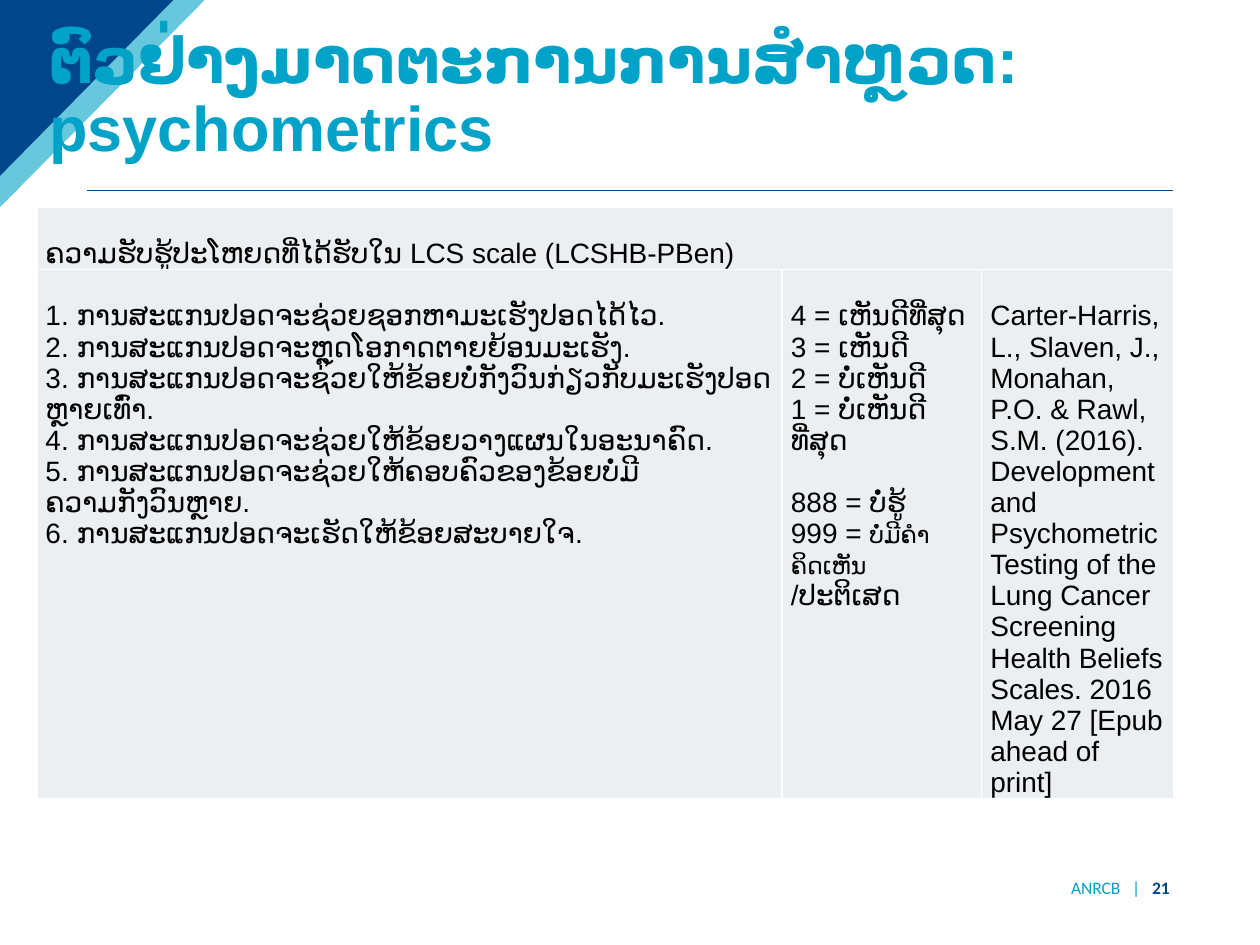
from dataclasses import dataclass

from lxml.etree import SubElement
from pptx import Presentation
from pptx.dml.color import RGBColor
from pptx.enum.shapes import MSO_CONNECTOR
from pptx.enum.text import MSO_ANCHOR, PP_ALIGN
from pptx.oxml.ns import qn
from pptx.util import Pt

CYAN = RGBColor(0x00, 0xA2, 0xC7)
NAVY = RGBColor(0x00, 0x46, 0x8B)
BLACK = RGBColor(0x00, 0x00, 0x00)
WHITE = RGBColor(0xFF, 0xFF, 0xFF)
PALE = RGBColor(0xEB, 0xEF, 0xF1)

BODY = {"name": "Arial", "size": Pt(16), "bold": False}
SMALL = {**BODY, "size": Pt(13.5)}
TITLE = {"name": "Arial", "size": Pt(36), "bold": True}
FOOTER = {"name": "Calibri", "size": Pt(10), "bold": False}
BLANK_LINE = 17.8


@dataclass(frozen=True)
class Span:
    text: str
    font: dict
    color: RGBColor = BLACK
    tracking: float = 0


@dataclass(frozen=True)
class Para:
    spans: tuple[Span, ...]
    format: dict


@dataclass(frozen=True)
class Corner:
    width: float
    height: float
    color: RGBColor
    opacity: int


@dataclass(frozen=True)
class TextBox:
    left: float
    top: float
    width: float
    height: float
    anchor: MSO_ANCHOR
    para: Para


def body(text: str, space: float = 0) -> Para:
    return Para((Span(text, BODY),), {"space_before": Pt(space)})


CORNERS = (Corner(117, 118.5, CYAN, 60), Corner(99, 100.5, NAVY, 100))

GAP = Span(" ", FOOTER, CYAN, 4.5)
BOXES = (
    TextBox(556.5, 499.5, 119, 15, MSO_ANCHOR.MIDDLE, Para(
        (Span("ANRCB", FOOTER, CYAN), GAP, Span("|", FOOTER, CYAN), GAP,
         Span("21", {**FOOTER, "bold": True}, NAVY)),
        {"alignment": PP_ALIGN.RIGHT})),
    TextBox(21, 18, 682.5, 80, MSO_ANCHOR.BOTTOM, Para(
        (Span("ຕົວຢ່າງມາດຕະການການສໍາຫຼວດ: psychometrics", TITLE, CYAN),),
        {"line_spacing": 0.9})),
)

COLUMN_WIDTHS = (426, 114, 109.5)
ROW_HEIGHTS = (35, 302)
HEADING = [body("ຄວາມຮັບຮູ້ປະໂຫຍດທີ່ໄດ້ຮັບໃນ LCS scale (LCSHB-PBen)")]
ITEMS = [body(text) for text in (
    "1. ການສະແກນປອດຈະຊ່ວຍຊອກຫາມະເຮັງປອດໄດ້ໄວ.",
    "2. ການສະແກນປອດຈະຫຼຸດໂອກາດຕາຍຍ້ອນມະເຮັງ.",
    "3. ການສະແກນປອດຈະຊ່ວຍໃຫ້ຂ້ອຍບໍ່ກັງວົນກ່ຽວກັບມະເຮັງປອດຫຼາຍເທົ່າ.",
    "4. ການສະແກນປອດຈະຊ່ວຍໃຫ້ຂ້ອຍວາງແຜນໃນອະນາຄົດ.",
    "5. ການສະແກນປອດຈະຊ່ວຍໃຫ້ຄອບຄົວຂອງຂ້ອຍບໍ່ມີຄວາມກັງວົນຫຼາຍ.",
    "6. ການສະແກນປອດຈະເຮັດໃຫ້ຂ້ອຍສະບາຍໃຈ.",
)]
ANSWERS = [
    body("4 = ເຫັນດີທີ່ສຸດ"),
    body("3 = ເຫັນດີ"),
    body("2 = ບໍ່ເຫັນດີ"),
    body("1 = ບໍ່ເຫັນດີທີ່ສຸດ"),
    body("888 = ບໍ່ຮູ້", BLANK_LINE),
    Para((Span("999 = ", BODY), Span("ບໍ່ມີຄຳຄິດເຫັນ", SMALL),
          Span(" /ປະຕິເສດ", BODY)), {}),
]
CITATION = [body(
    "Carter-Harris, L., Slaven, J., Monahan, P.O. & Rawl, S.M. (2016). "
    "Development and Psychometric Testing of the Lung Cancer Screening "
    "Health Beliefs Scales. 2016 May 27 [Epub ahead of print]")]
CELLS = {(0, 0): HEADING, (1, 0): ITEMS, (1, 1): ANSWERS, (1, 2): CITATION}


def apply(target, values: dict) -> None:
    for name, value in values.items():
        setattr(target, name, value)


def write(frame, paras: list[Para]) -> None:
    for index, para in enumerate(paras):
        paragraph = frame.add_paragraph() if index else frame.paragraphs[0]
        apply(paragraph, para.format)
        for span in para.spans:
            run = paragraph.add_run()
            run.text = span.text
            apply(run.font, span.font)
            run.font.color.rgb = span.color
            properties = run.font._element
            SubElement(properties, qn("a:cs"), typeface=span.font["name"])
            if span.tracking:
                properties.set("spc", str(int(span.tracking * 100)))


def draw_corner(page, corner: Corner) -> None:
    builder = page.shapes.build_freeform(0, 0)
    builder.add_line_segments([(Pt(corner.width), 0), (0, Pt(corner.height))])
    shape = builder.convert_to_shape()
    shape.shadow.inherit = False
    shape.line.fill.background()
    shape.fill.solid()
    shape.fill.fore_color.rgb = corner.color
    if corner.opacity < 100:
        color = shape.fill._xPr.find(".//" + qn("a:srgbClr"))
        SubElement(color, qn("a:alpha"), val=str(corner.opacity * 1000))


def draw_rule(page) -> None:
    rule = page.shapes.add_connector(
        MSO_CONNECTOR.STRAIGHT, Pt(49.7), Pt(108.7), Pt(670.3), Pt(108.7))
    rule.line.color.rgb = NAVY
    rule.line.width = Pt(0.75)
    SubElement(rule._element.spPr, qn("a:effectLst"))


def draw_text(page, item: TextBox) -> None:
    box = page.shapes.add_textbox(
        Pt(item.left), Pt(item.top), Pt(item.width), Pt(item.height))
    apply(box.text_frame, {"word_wrap": True, "vertical_anchor": item.anchor})
    write(box.text_frame, [item.para])


def style_cell(cell) -> None:
    apply(cell, {"margin_left": Pt(5), "margin_right": Pt(5),
                 "margin_top": Pt(BLANK_LINE), "margin_bottom": 0})
    properties = cell._tc.get_or_add_tcPr()
    for side in ("a:lnL", "a:lnR", "a:lnT", "a:lnB"):
        border = SubElement(properties, qn(side), w=str(Pt(1)))
        fill = SubElement(border, qn("a:solidFill"))
        SubElement(fill, qn("a:srgbClr"), val=str(WHITE))
    cell.fill.solid()
    cell.fill.fore_color.rgb = PALE


def draw_table(page) -> None:
    table = page.shapes.add_table(
        len(ROW_HEIGHTS), len(COLUMN_WIDTHS), Pt(21), Pt(118.5),
        Pt(sum(COLUMN_WIDTHS)), Pt(sum(ROW_HEIGHTS))).table
    apply(table, {"first_row": False, "horz_banding": False})
    for column, width in zip(table.columns, COLUMN_WIDTHS):
        column.width = Pt(width)
    for row, height in zip(table.rows, ROW_HEIGHTS):
        row.height = Pt(height)
    for cell in table.iter_cells():
        style_cell(cell)
    table.cell(0, 0).merge(table.cell(0, len(COLUMN_WIDTHS) - 1))
    for (row, column), paras in CELLS.items():
        write(table.cell(row, column).text_frame, paras)


def main() -> None:
    deck = Presentation()
    apply(deck, {"slide_width": Pt(720), "slide_height": Pt(540)})
    page = deck.slides.add_slide(deck.slide_layouts[6])
    draw_rule(page)
    for corner in CORNERS:
        draw_corner(page, corner)
    draw_table(page)
    for item in BOXES:
        draw_text(page, item)
    deck.save("out.pptx")


if __name__ == "__main__":
    main()
